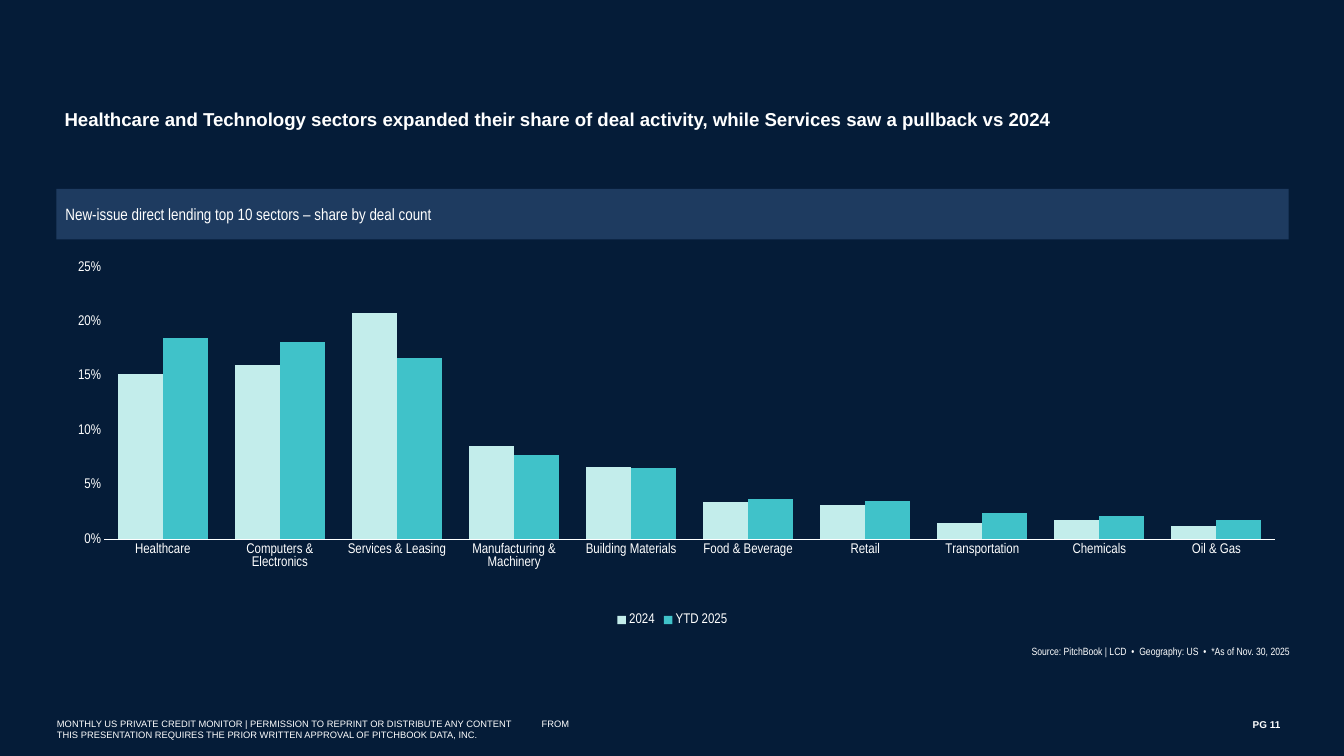
import pptx
import pptx.chart.data
import pptx.dml.color
import pptx.enum.chart
import pptx.enum.shapes
import pptx.enum.text
import pptx.util
from dataclasses import dataclass
from lxml import etree

Inches = pptx.util.Inches
Pt = pptx.util.Pt
Align = pptx.enum.text.PP_ALIGN
Anchor = pptx.enum.text.MSO_ANCHOR


def color(value):
    return pptx.dml.color.RGBColor.from_string(value)


@dataclass(frozen=True)
class Theme:
    background = color("051C38")
    band = color("1E3B60")
    text = color("FFFFFF")
    series = (color("C3EDEB"), color("40C2C9"))
    font = "Arial"
    narrow_font = "Arial Narrow"
    title_size = Pt(16)
    subtitle_size = Pt(14)
    chart_size = Pt(12)
    source_size = Pt(9)
    page_size = Pt(8.5)
    footer_size = Pt(8)


theme = Theme()

presentation = pptx.Presentation()
presentation.slide_width = Inches(16)
presentation.slide_height = Inches(9)
slide = presentation.slides.add_slide(presentation.slide_layouts[6])
slide.background.fill.solid()
slide.background.fill.fore_color.rgb = theme.background


def style_font(font, name, size, bold=False):
    font.name = name
    font.size = size
    font.bold = bold
    font.color.rgb = theme.text


def add_text(box, text, name, size, bold=False, align=Align.LEFT, anchor=Anchor.TOP):
    """Add a one-paragraph text box; box is left, top, width, height in inches."""
    shape = slide.shapes.add_textbox(*map(Inches, box))
    shape.text_frame.word_wrap = True
    shape.text_frame.vertical_anchor = anchor
    paragraph = shape.text_frame.paragraphs[0]
    paragraph.alignment = align
    run = paragraph.add_run()
    run.text = text
    style_font(run.font, name, size, bold)
    return paragraph


# Header
band = slide.shapes.add_shape(
    pptx.enum.shapes.MSO_SHAPE.RECTANGLE,
    Inches(0.67), Inches(2.25), Inches(14.67), Inches(0.6))
band.shadow.inherit = False
band.fill.solid()
band.fill.fore_color.rgb = theme.band
band.line.fill.background()

add_text((0.67, 1.23, 14.67, 1),
         "Healthcare and Technology sectors expanded their share of deal activity, "
         "while Services saw a pullback vs 2024",
         theme.font, theme.title_size, bold=True)
add_text((0.68, 2.25, 14.65, 0.6),
         "New-issue direct lending top 10 sectors – share by deal count",
         theme.narrow_font, theme.subtitle_size, anchor=Anchor.MIDDLE)

# Chart
sectors = [
    ("Healthcare", 0.152, 0.185),
    ("Computers & Electronics", 0.16, 0.181),
    ("Services & Leasing", 0.208, 0.166),
    ("Manufacturing & Machinery", 0.086, 0.077),
    ("Building Materials", 0.066, 0.065),
    ("Food & Beverage", 0.034, 0.037),
    ("Retail", 0.031, 0.035),
    ("Transportation", 0.015, 0.024),
    ("Chemicals", 0.018, 0.021),
    ("Oil & Gas", 0.012, 0.018),
]
names, shares_2024, shares_2025 = zip(*sectors)
chart_data = pptx.chart.data.CategoryChartData(number_format="0%")
chart_data.categories = names
chart_data.add_series("2024", shares_2024)
chart_data.add_series("YTD 2025", shares_2025)
chart = slide.shapes.add_chart(
    pptx.enum.chart.XL_CHART_TYPE.COLUMN_CLUSTERED,
    Inches(0.67), Inches(3), Inches(14.67), Inches(4.5), chart_data).chart
chart.has_title = False
style_font(chart.font, theme.narrow_font, theme.chart_size)

plot = chart.plots[0]
plot.gap_width = 60
plot.overlap = 0
plot.vary_by_categories = False
for series, fill_color in zip(plot.series, theme.series):
    series.format.fill.solid()
    series.format.fill.fore_color.rgb = fill_color
    series.invert_if_negative = False

for axis in (chart.category_axis, chart.value_axis):
    axis.has_major_gridlines = False
    axis.major_tick_mark = pptx.enum.chart.XL_TICK_MARK.NONE
    axis.minor_tick_mark = pptx.enum.chart.XL_TICK_MARK.NONE
    style_font(axis.tick_labels.font, theme.narrow_font, theme.chart_size)
chart.category_axis.format.line.color.rgb = theme.text
chart.category_axis.format.line.width = Pt(0.75)
value_axis = chart.value_axis
value_axis.format.line.fill.background()
value_axis.minimum_scale = 0
value_axis.maximum_scale = 0.25
value_axis.major_unit = 0.05
value_axis.tick_labels.number_format = "0%"
value_axis.tick_labels.number_format_is_linked = False

chart.has_legend = True
chart.legend.position = pptx.enum.chart.XL_LEGEND_POSITION.BOTTOM
chart.legend.include_in_layout = False
style_font(chart.legend.font, theme.narrow_font, theme.chart_size)

# Fixed inner plot area, as fractions of the chart
namespace = "{http://schemas.openxmlformats.org/drawingml/2006/chart}"
plot_area = chart.plots[0]._element.getparent()
for layout in plot_area.findall(namespace + "layout"):
    plot_area.remove(layout)
layout = etree.Element(namespace + "layout")
plot_area.insert(0, layout)
manual = etree.SubElement(layout, namespace + "manualLayout")
for tag, value in (("layoutTarget", "inner"), ("xMode", "edge"), ("yMode", "edge"),
                   ("x", "0.039"), ("y", "0.04"), ("w", "0.95"), ("h", "0.72")):
    etree.SubElement(manual, namespace + tag).set("val", value)

# Source and footer
add_text((10.92, 7.63, 4.53, 0.25),
         "Source: PitchBook | LCD  •  Geography: US  •  *As of Nov. 30, 2025",
         theme.narrow_font, theme.source_size, align=Align.RIGHT)
footer = add_text((0.58, 8.5, 6.33, 0.37),
                  "MONTHLY US PRIVATE CREDIT MONITOR | PERMISSION TO REPRINT OR DISTRIBUTE "
                  "ANY CONTENT\tFROM THIS PRESENTATION REQUIRES THE PRIOR WRITTEN APPROVAL "
                  "OF PITCHBOOK DATA, INC.",
                  theme.font, theme.footer_size)
drawing = "{http://schemas.openxmlformats.org/drawingml/2006/main}"
tabs = etree.SubElement(footer._p.get_or_add_pPr(), drawing + "tabLst")
etree.SubElement(tabs, drawing + "tab", pos=str(Inches(5.77)), algn="l")
add_text((13.75, 8.5, 1.59, 0.24), "PG 11",
         theme.font, theme.page_size, bold=True, align=Align.RIGHT)

presentation.save("out.pptx")
